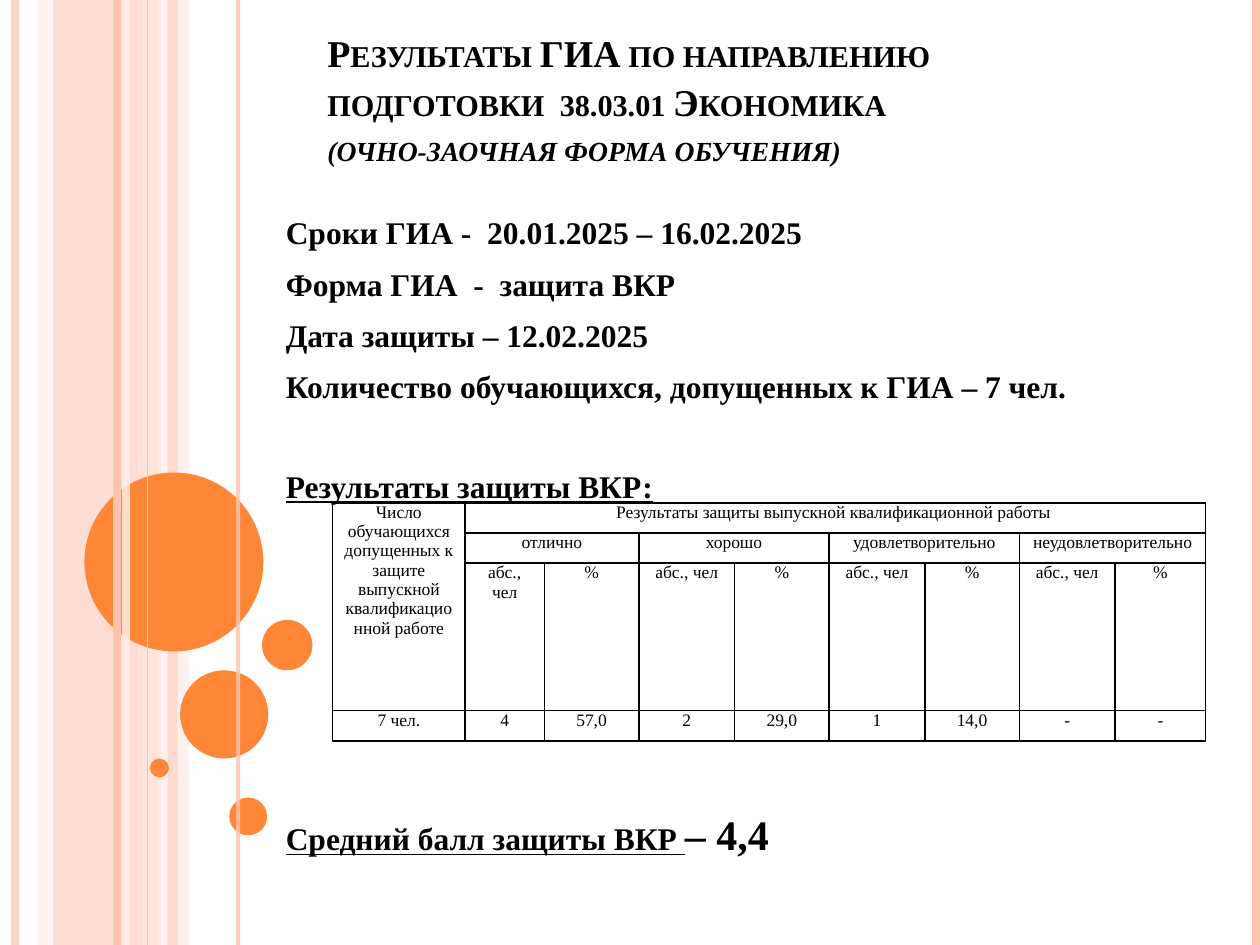
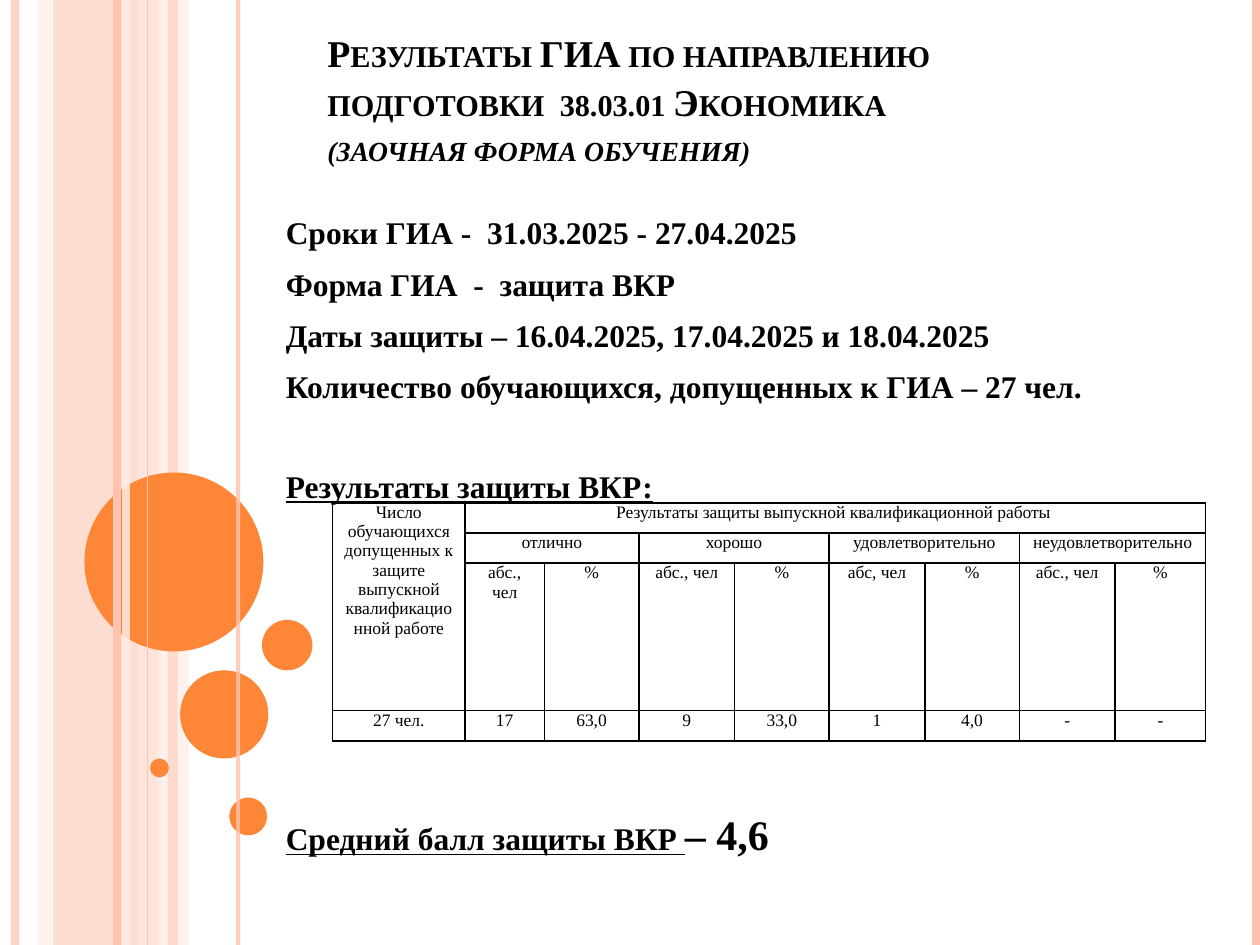
"""Build two slides with the results of the final state exam."""
from lxml.etree import SubElement as Sub
from pptx import Presentation
from pptx.dml.color import RGBColor as RGB
from pptx.enum.shapes import MSO_CONNECTOR as Conn, MSO_SHAPE as Form
from pptx.enum.text import MSO_ANCHOR as Anchor, PP_ALIGN as Align
from pptx.oxml.ns import qn
from pptx.util import Pt

PX = 9144
WIDE, HIGH = 1000, 750
FACE = "Times New Roman"
BLACK = RGB(0x00, 0x00, 0x00)
PEACH = RGB(0xFE, 0xC3, 0xAE)
PALE = RGB(0xFF, 0xD9, 0xCE)
MIST = RGB(0xFF, 0xED, 0xE8)
ORANGE = RGB(0xFE, 0x86, 0x37)

BANDS = [(42, 67, PEACH, 54), (30, 11, PALE, 36), (108, 20, PALE, 70),
         (125, 25, MIST, 71), (133, 8, PEACH, 51)]
RULES = [(12, PEACH, 4.5, 73), (100, MIST, 4.5, 83), (93, PEACH, 4.5, 100),
         (189, PEACH, 2.25, 82), (117, PEACH, 0.75, 100), (997, PEACH, 4.5, 100)]
DOTS = [(67, 375, 142), (143, 532, 70), (119, 602, 15), (182, 633, 30), (208, 492, 40)]

COLS = [105, 63, 75, 76, 75, 76, 75, 76, 72]
ROWS = [24, 24, 117, 24]
GRADES = ["отлично", "хорошо", "удовлетворительно", "неудовлетворительно"]
HEAD = "Число обучающихся допущенных к защите выпускной квалификационной работе"
SPAN = "Результаты защиты выпускной квалификационной работы "
COUNT = "абс., чел"

PAGES = [
    {"mode": "(очно-заочная форма обучения)",
     "term": "20.01.2025 – 16.02.2025",
     "date": "Дата защиты – 12.02.2025",
     "size": "7 чел.", "mean": "– 4,4", "third": COUNT,
     "marks": ["4", "57,0", "2", "29,0", "1", "14,0", "-", "-"]},
    {"mode": "(заочная форма обучения)",
     "term": "31.03.2025 - 27.04.2025",
     "date": "Даты защиты – 16.04.2025, 17.04.2025 и 18.04.2025",
     "size": "27 чел.", "mean": "– 4,6", "third": "абс, чел",
     "marks": ["17", "63,0", "9", "33,0", "1", "4,0", "-", "-"]},
]


def write(para, text, size, **more):
    run = para.add_run()
    run.text = text
    run.font.color.rgb = BLACK
    for key, val in {"name": FACE, "size": Pt(size), **more}.items():
        setattr(run.font, key, val)
    return run


def fade(item, part):
    props = item._element.spPr
    for tint in props.iter(qn("a:srgbClr")):
        if part < 100:
            Sub(tint, qn("a:alpha"), val=str(part * 1000))


deck = Presentation()
deck.slide_width, deck.slide_height = WIDE * PX, HIGH * PX

for page in PAGES:
    slide = deck.slides.add_slide(deck.slide_layouts[6])
    shapes = slide.shapes

    solids = [(Form.RECTANGLE, x, 0, w, HIGH, tint, part) for x, w, tint, part in BANDS]
    solids += [(Form.OVAL, x, y, d, d, ORANGE, 100) for x, y, d in DOTS]
    for form, x, y, w, h, tint, part in solids:
        solid = shapes.add_shape(form, x * PX, y * PX, w * PX, h * PX)
        solid.shadow.inherit = False
        solid.fill.solid()
        solid.fill.fore_color.rgb = tint
        solid.line.fill.background()
        fade(solid, part)

    for x, tint, thick, part in RULES:
        rule = shapes.add_connector(Conn.STRAIGHT, x * PX, 0, x * PX, HIGH * PX)
        rule.line.color.rgb = tint
        rule.line.width = Pt(thick)
        Sub(rule._element.spPr, qn("a:effectLst"))
        fade(rule, part)

    frame = shapes.add_textbox(250 * PX, 21 * PX, 675 * PX, 118 * PX).text_frame
    frame.word_wrap = True
    frame.vertical_anchor = Anchor.BOTTOM
    frame.margin_right = 20 * PX
    para = frame.paragraphs[0]
    para.line_spacing = 1.08
    title = write(para, "Результаты ГИА по направлению подготовки  38.03.01 Экономика",
                  21.6, bold=True)
    para.add_line_break()
    mode = write(para, page["mode"], 19.8, bold=True, italic=True)
    for run in (title, mode):
        run._r.get_or_add_rPr().set("cap", "small")

    frame = shapes.add_textbox(217 * PX, 162 * PX, 764 * PX, 535 * PX).text_frame
    frame.word_wrap = True
    lines = [("Сроки ГИА -  " + page["term"], 6, False),
             ("Форма ГИА  -  защита ВКР", 6, False),
             (page["date"], 6, False),
             ("Количество обучающихся, допущенных к ГИА – " + page["size"], 6, False),
             ("Результаты защиты ВКР:", 33.6, True),
             ("Средний балл защиты ВКР ", 171.6, True)]
    for i, (text, gap, under) in enumerate(lines):
        para = frame.add_paragraph() if i else frame.paragraphs[0]
        para.space_before = Pt(gap)
        para.line_spacing = 1.08
        write(para, text, 18, bold=True, underline=under)
    write(para, page["mean"], 24, bold=True)

    table = shapes.add_table(len(ROWS), len(COLS), 264 * PX, 399 * PX,
                             sum(COLS) * PX, sum(ROWS) * PX).table
    table.first_row = table.horz_banding = False
    for col, w in zip(table.columns, COLS):
        col.width = w * PX
    for row, h in zip(table.rows, ROWS):
        row.height = h * PX
    table.cell(0, 0).merge(table.cell(2, 0))
    table.cell(0, 1).merge(table.cell(0, 8))
    for c in range(1, 9, 2):
        table.cell(1, c).merge(table.cell(1, c + 1))

    units = [COUNT, "%", COUNT, "%", page["third"], "%", COUNT, "%"]
    grid = [[HEAD, SPAN] + [""] * 7,
            [""] + [text for grade in GRADES for text in (grade, "")],
            [""] + units,
            [page["size"]] + page["marks"]]
    for r, texts in enumerate(grid):
        for c, text in enumerate(texts):
            cell = table.cell(r, c)
            cell.margin_left = cell.margin_right = 7 * PX
            cell.margin_top = cell.margin_bottom = 0
            props = cell._tc.get_or_add_tcPr()
            for side in "LRTB":
                edge = Sub(props, qn("a:ln" + side), w=str(Pt(1)))
                Sub(Sub(edge, qn("a:solidFill")), qn("a:srgbClr"), val=str(BLACK))
            cell.fill.background()
            para = cell.text_frame.paragraphs[0]
            para.alignment = Align.CENTER
            if text:
                write(para, text, 10)
            else:
                para.font.size = Pt(10)

deck.save("out.pptx")
